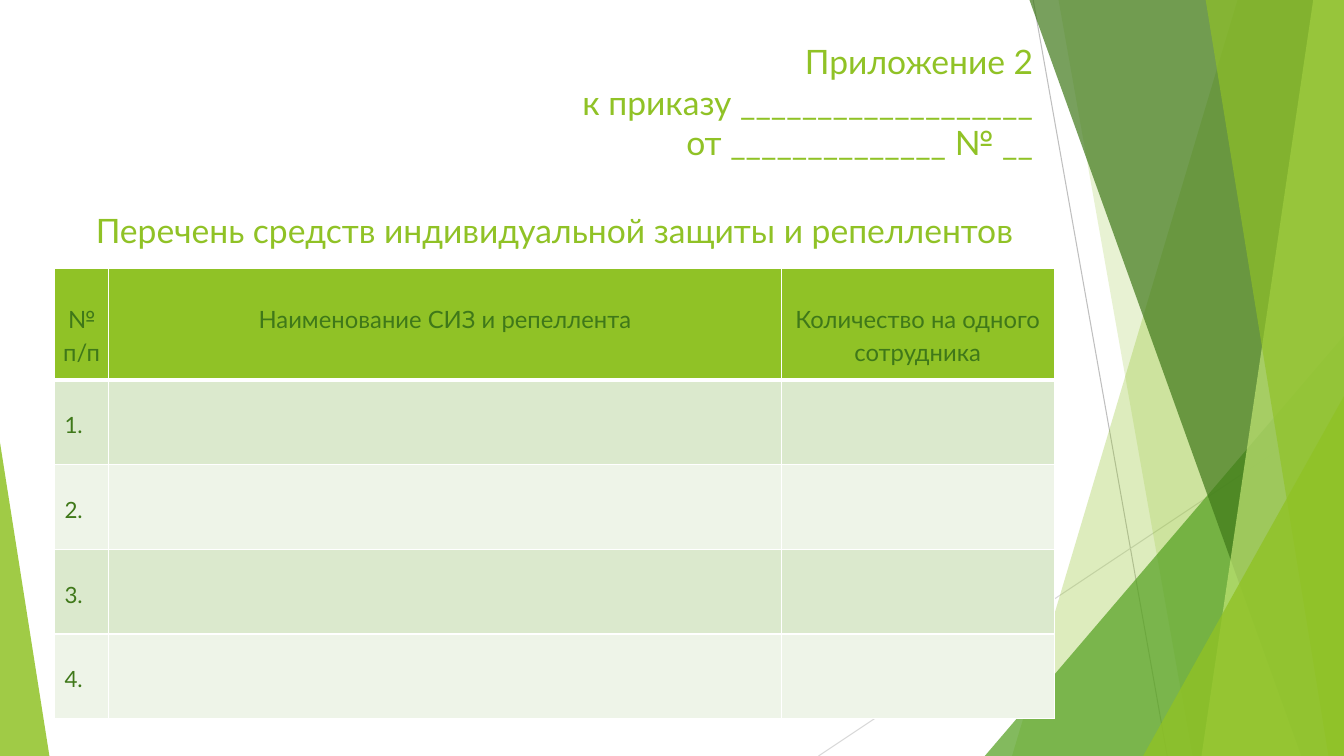
from pptx import Presentation
from pptx.dml.color import RGBColor
from pptx.enum.shapes import MSO_CONNECTOR, MSO_SHAPE
from pptx.enum.text import MSO_ANCHOR, PP_ALIGN
from pptx.oxml.ns import qn
from pptx.util import Pt
from lxml import etree

STRAIGHT = MSO_CONNECTOR.STRAIGHT
TRIANGLE = MSO_SHAPE.ISOSCELES_TRIANGLE
TOP, MIDDLE = MSO_ANCHOR.TOP, MSO_ANCHOR.MIDDLE
LEFT, CENTER, RIGHT = PP_ALIGN.LEFT, PP_ALIGN.CENTER, PP_ALIGN.RIGHT

WIDTH, HEIGHT = 960, 540
PANEL_TOP = -0.72
FONT = "Lato"
LIME, GREEN, DARK, PALE = "90C226", "54A021", "3F7819", "C0E474"
BANDS = ["DBE9CD", "EEF4E8"]
TITLE = "Приложение 2\nк приказу ___________________\nот ______________ № __"
SUBTITLE = "Перечень средств индивидуальной защиты и репеллентов"
HEADERS = ["№\nп/п", "Наименование СИЗ и репеллента", "Количество на одного сотрудника"]
COLUMN_WIDTHS = [38.88, 480.24, 195.12]
HEADER_HEIGHT, ROW_HEIGHT, ROW_COUNT = 79.92, 60.48, 4


def rgb(color):
    return RGBColor.from_string(color)


def paint(sp, color, opacity):
    sp.shadow.inherit = False
    sp.line.fill.background()
    sp.fill.solid()
    sp.fill.fore_color.rgb = rgb(color)
    clr = sp.fill._xPr.find(qn("a:solidFill"))[0]
    etree.SubElement(clr, qn("a:alpha"), val=str(opacity * 1000))


def add_panel(slide, top_x, bottom_x, color, opacity):
    """Panel with a slanted left side that reaches the right slide edge."""
    builder = slide.shapes.build_freeform(Pt(top_x), Pt(PANEL_TOP))
    builder.add_line_segments([(Pt(WIDTH), Pt(PANEL_TOP)), (Pt(WIDTH), Pt(HEIGHT)),
                               (Pt(bottom_x), Pt(HEIGHT))])
    paint(builder.convert_to_shape(), color, opacity)


def add_triangle(slide, x, y, w, apex, color, opacity):
    """Triangle standing on the bottom slide edge."""
    sp = slide.shapes.add_shape(TRIANGLE, Pt(x), Pt(y), Pt(w), Pt(HEIGHT - y))
    sp.adjustments[0] = apex
    paint(sp, color, opacity)


def add_line(slide, x1, y1, x2, y2, color):
    line = slide.shapes.add_connector(STRAIGHT, Pt(x1), Pt(y1), Pt(x2), Pt(y2))
    line.line.color.rgb = rgb(color)
    line.line.width = Pt(0.75)
    etree.SubElement(line._element.spPr, qn("a:effectLst"))


def format_text(tf, size, color, align, spacing=1.0):
    for p in tf.paragraphs:
        p.alignment = align
        p.line_spacing = spacing
        for r in p.runs:
            r.font.name = FONT
            r.font.size = Pt(size)
            r.font.color.rgb = rgb(color)


def place(sp, x, y, w, h):
    sp.left, sp.top, sp.width, sp.height = Pt(x), Pt(y), Pt(w), Pt(h)


def set_borders(cell, top, bottom):
    tcPr = cell._tc.get_or_add_tcPr()
    for side, width in (("L", 1), ("R", 1), ("T", top), ("B", bottom)):
        ln = etree.SubElement(tcPr, qn(f"a:ln{side}"), w=str(Pt(width)))
        fill = etree.SubElement(ln, qn("a:solidFill"))
        etree.SubElement(fill, qn("a:srgbClr"), val="FFFFFF")


def fill_cell(cell, text, color, header_row, first_body_row):
    set_borders(cell, 3 if first_body_row else 1, 3 if header_row else 1)
    cell.fill.solid()
    cell.fill.fore_color.rgb = rgb(color)
    cell.vertical_anchor = TOP
    cell.text_frame.text = text
    if header_row:
        cell.margin_left = cell.margin_right = Pt(5)
        cell.margin_top, cell.margin_bottom = Pt(23.5), 0
        format_text(cell.text_frame, 17, DARK, CENTER, 1.15)
    else:
        cell.margin_top = Pt(22.8)
        format_text(cell.text_frame, 16, DARK, LEFT)


def add_equipment_table(slide):
    rows = [HEADERS] + [[f"{n}.", "", ""] for n in range(1, ROW_COUNT + 1)]
    heights = [HEADER_HEIGHT] + [ROW_HEIGHT] * ROW_COUNT
    table = slide.shapes.add_table(len(rows), len(HEADERS), Pt(38.88), Pt(191.52),
                                   Pt(sum(COLUMN_WIDTHS)), Pt(sum(heights))).table
    for column, width in zip(table.columns, COLUMN_WIDTHS):
        column.width = Pt(width)
    for i, (texts, height) in enumerate(zip(rows, heights)):
        table.rows[i].height = Pt(height)
        color = BANDS[(i - 1) % 2] if i else LIME
        for j, text in enumerate(texts):
            fill_cell(table.cell(i, j), text, color, i == 0, i == 1)


def add_background(slide):
    add_line(slide, 738, 0, 833.76, HEIGHT, "BFBFBF")
    add_line(slide, WIDTH, 290.16, 584.64, HEIGHT, "D9D9D9")
    add_panel(slide, 884.16, 722.88, LIME, 30)
    add_panel(slide, 756, 851.76, LIME, 20)
    add_triangle(slide, 703.44, 239.76, 256.56, 1, GREEN, 72)
    add_panel(slide, 735.12, 929.52, DARK, 70)
    add_panel(slide, 938.16, 858.24, PALE, 70)
    add_panel(slide, 861.12, 948.96, LIME, 65)
    add_triangle(slide, 816.48, 282.96, 143.52, 1, LIME, 80)
    add_triangle(slide, 0, 316.08, 35.28, 0, LIME, 85)


def add_title(slide):
    title = slide.shapes.title
    place(title, 59.76, 25.2, 685.44, 95.04)
    tf = title.text_frame
    tf.vertical_anchor = MIDDLE
    tf.paragraphs[0].text = TITLE
    format_text(tf, 24, LIME, RIGHT)


def add_subtitle(slide):
    box = slide.shapes.add_textbox(Pt(53.28), Pt(146.16), Pt(685.44), Pt(45.36))
    tf = box.text_frame
    tf.word_wrap = True
    tf.text = SUBTITLE
    format_text(tf, 24, LIME, CENTER)


def main():
    prs = Presentation()
    prs.slide_width, prs.slide_height = Pt(WIDTH), Pt(HEIGHT)
    slide = prs.slides.add_slide(prs.slide_layouts[5])  # Title Only

    # Decoration
    add_background(slide)

    # Content
    add_title(slide)
    add_equipment_table(slide)
    add_subtitle(slide)
    prs.save("out.pptx")


if __name__ == "__main__":
    main()
